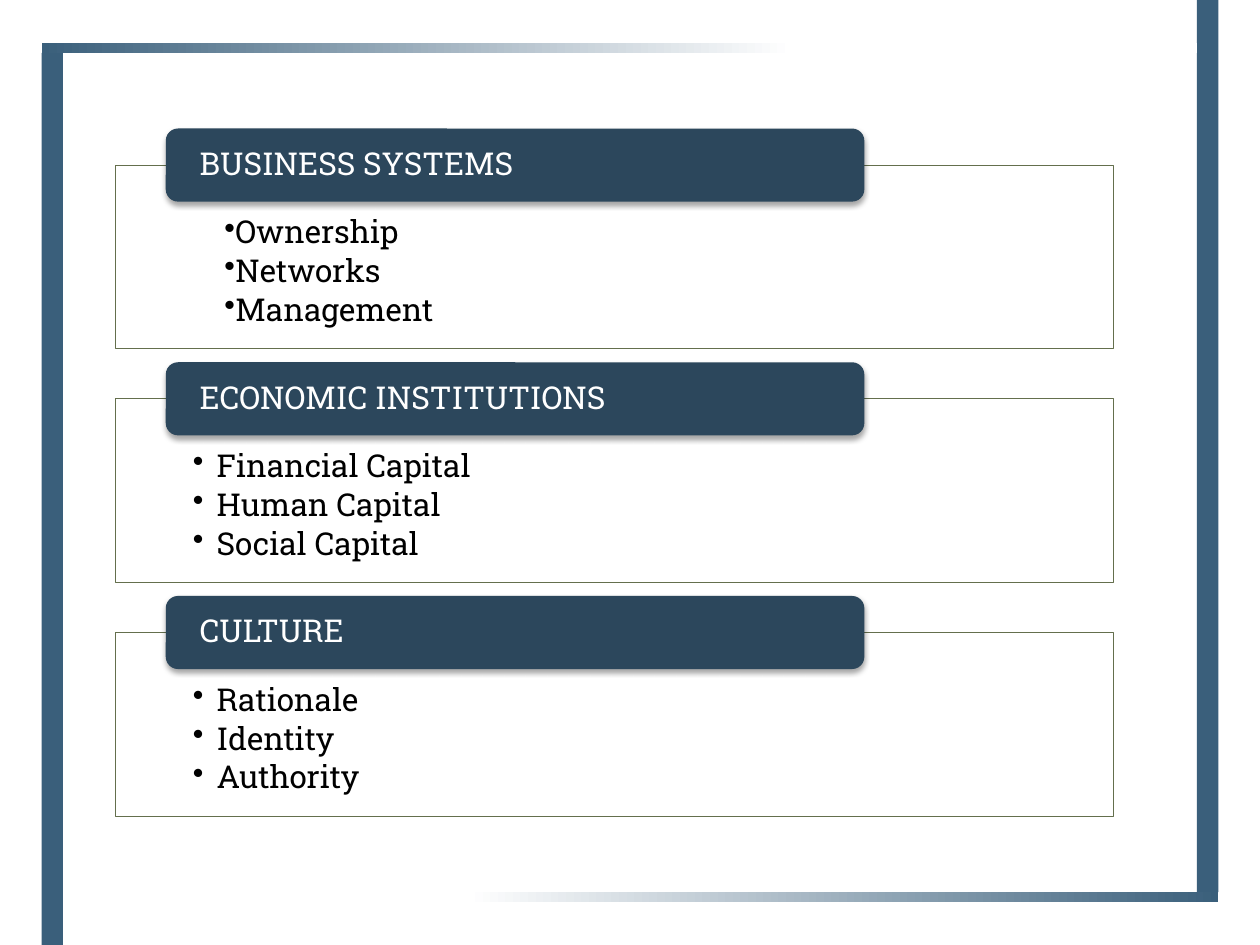
from lxml import etree
from pptx import Presentation
from pptx.dml.color import RGBColor
from pptx.enum.shapes import MSO_SHAPE
from pptx.enum.text import MSO_ANCHOR, PP_ALIGN
from pptx.oxml.ns import qn
from pptx.util import Inches, Pt

RECTANGLE, ROUNDED = MSO_SHAPE.RECTANGLE, MSO_SHAPE.ROUNDED_RECTANGLE
TOP, MIDDLE, LEFT = MSO_ANCHOR.TOP, MSO_ANCHOR.MIDDLE, PP_ALIGN.LEFT
FONT = "Roboto Slab"
COLORS = {"bar": "3A5F7B", "header": "2C475C", "border": "646F4D",
          "white": "FFFFFF", "black": "000000"}
SECTIONS = [
    ("BUSINESS SYSTEMS", ["Ownership", "Networks", "Management"], 0.25, 0),
    ("ECONOMIC INSTITUTIONS",
     ["Financial Capital", "Human Capital", "Social Capital"], 0.19, -0.19),
    ("CULTURE", ["Rationale", "Identity", "Authority"], 0.19, -0.19),
]
SECTION_TOP, SECTION_PITCH = 1.02, 1.855


def rgb(name):
    """Look up a named colour."""
    return RGBColor.from_string(COLORS[name])


def set_values(target, values):
    """Set attributes from a dict."""
    for name, value in values.items():
        setattr(target, name, value)


def add_child(parent, tag, **attributes):
    """Append a DrawingML element and return it."""
    return etree.SubElement(parent, qn(tag), attributes)


def add_box(page, kind, box, fill=None):
    """Add a shape without outline or shadow, with an optional solid fill."""
    shape = page.shapes.add_shape(kind, *map(Inches, box))
    shape.shadow.inherit = False
    shape.line.fill.background()
    if fill:
        shape.fill.solid()
        shape.fill.fore_color.rgb = rgb(fill)
    return shape


def add_fading_bar(page, box, angle):
    """Add a bar that fades from the bar colour to white."""
    fill = add_box(page, RECTANGLE, box).fill
    fill.gradient()
    fill.gradient_angle = angle
    for stop, color, position in zip(fill.gradient_stops, ("bar", "white"), (0, 0.65)):
        stop.color.rgb = rgb(color)
        stop.position = position


def add_frame(page, left, top, width, height):
    """Draw the side bars and the fading bars around the page."""
    thick, thin, tall = 0.17, 0.08, height - 0.42
    add_box(page, RECTANGLE, (left + width - thick, 0, thick, tall), "bar")
    add_box(page, RECTANGLE, (left, height - tall, thick, tall), "bar")
    add_fading_bar(page, (left + thick, top + tall, width - thick, thin), 180)
    add_fading_bar(page, (left, height - tall - thin, width - thick, thin), 0)


def add_header_shadow(shape):
    """Put a soft shadow below a header."""
    effects = shape._element.spPr.find(qn("a:effectLst"))
    shadow = add_child(effects, "a:outerShdw", blurRad=str(Pt(3.1)),
                       dist=str(Pt(2)), dir="5400000", rotWithShape="0")
    color = add_child(shadow, "a:srgbClr", val=COLORS["black"])
    add_child(color, "a:alpha", val="35000")


def write_lines(shape, lines, color, after, frame_values, level=0, indent=None):
    """Write paragraphs, with bullets where an indent pair is given."""
    frame = shape.text_frame
    set_values(frame, {"word_wrap": True, **frame_values})
    for index, line in enumerate(lines):
        para = frame.add_paragraph() if index else frame.paragraphs[0]
        properties = para._p.get_or_add_pPr()
        spacing = add_child(properties, "a:spcAft")
        add_child(spacing, "a:spcPct", val=str(after * 1000))
        if indent:
            margin, first = indent
            properties.set("marL", str(Inches(margin)))
            properties.set("indent", str(Inches(first)))
            add_child(properties, "a:buChar", char="•")
        set_values(para, {"level": level, "alignment": LEFT, "line_spacing": 0.9})
        span = para.add_run()
        span.text = line
        set_values(span.font, {"name": FONT, "size": Pt(18)})
        span.font.color.rgb = rgb(color)


def add_section(page, box, title, items, indent):
    """Add an outlined list with a header over its upper edge."""
    left, top, width, height = box
    header_height = 0.58
    half = header_height / 2
    panel = add_box(page, RECTANGLE, (left, top + half, width, height - half), "white")
    panel.line.color.rgb = rgb("border")
    panel.line.width = Pt(0.5)
    write_lines(panel, items, "black", 15, {
        "vertical_anchor": TOP, "margin_left": Inches(0.61), "margin_top": Inches(0.41),
        "margin_right": Inches(0.61), "margin_bottom": Inches(0.14)}, 1, indent)
    header = add_box(page, ROUNDED,
                     (left + width * 0.05, top, width * 0.7, header_height), "header")
    add_header_shadow(header)
    write_lines(header, [title], "white", 35, {
        "vertical_anchor": MIDDLE, "margin_left": Inches(0.24), "margin_top": 0,
        "margin_right": Inches(0.24), "margin_bottom": 0})


def main():
    """Build and save the deck."""
    deck = Presentation()
    set_values(deck, {"slide_width": Inches(10), "slide_height": Inches(7.5)})
    page = deck.slides.add_slide(deck.slide_layouts[6])
    add_frame(page, 0.33, 0, 9.34, 7.5)
    for index, (title, items, margin, first) in enumerate(SECTIONS):
        top = SECTION_TOP + index * SECTION_PITCH
        add_section(page, (0.92, top, 7.92, 1.75), title, items, (margin, first))
    deck.save("out.pptx")


if __name__ == "__main__":
    main()
